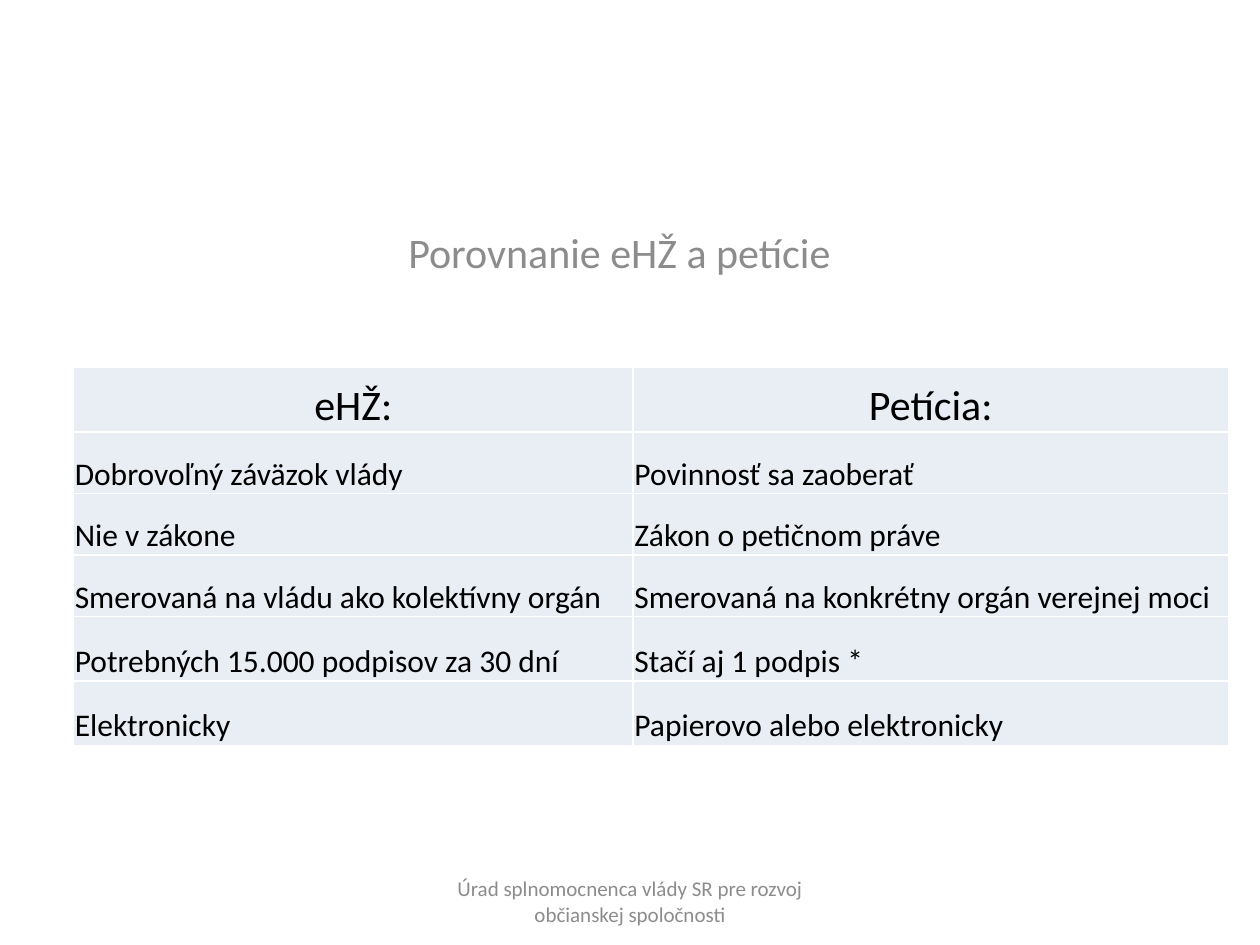
import dataclasses
import pptx
import pptx.dml.color
import pptx.enum.text
import pptx.oxml
import pptx.oxml.ns
import pptx.util

Pt = pptx.util.Pt
ALIGN = pptx.enum.text.PP_ALIGN
ANCHOR = pptx.enum.text.MSO_ANCHOR
GREY, BLACK, WHITE, PALE = "8C8C8C", "000000", "FFFFFF", "E9EDF4"


@dataclasses.dataclass
class Row:
    left: str
    right: str
    height: float
    size: float = 18
    align: ALIGN = ALIGN.LEFT


ROWS = [
    Row("eHŽ:", "Petícia:", 36.8, 24, ALIGN.CENTER),
    Row("Dobrovoľný záväzok vlády", "Povinnosť sa zaoberať", 35.2),
    Row("Nie v zákone", "Zákon o petičnom práve", 35.2),
    Row("Smerovaná na vládu ako kolektívny orgán",
        "Smerovaná na konkrétny orgán verejnej moci", 35.2),
    Row("Potrebných 15.000 podpisov za 30 dní", "Stačí aj 1 podpis *", 36.8),
    Row("Elektronicky", "Papierovo alebo elektronicky", 36.8),
]
COLS = [319.8, 340.2]


def color(code: str) -> pptx.dml.color.RGBColor:
    return pptx.dml.color.RGBColor.from_string(code)


def write(frame, text: str, size: float, code: str, align: ALIGN) -> None:
    frame.text = text
    frame.word_wrap = True
    para = frame.paragraphs[0]
    para.alignment = align
    font = para.runs[0].font
    font.name, font.size = "Calibri", Pt(size)
    font.color.rgb = color(code)


def border(cell, code: str, width: float) -> None:
    props = cell._tc.get_or_add_tcPr()
    space = pptx.oxml.ns.nsdecls("a")
    for spot, side in enumerate(("lnL", "lnR", "lnT", "lnB")):
        props.insert(spot, pptx.oxml.parse_xml(
            f'<a:{side} {space} w="{Pt(width)}"><a:solidFill>'
            f'<a:srgbClr val="{code}"/></a:solidFill></a:{side}>'))


def fill(cell, text: str, row: Row) -> None:
    write(cell.text_frame, text, row.size, BLACK, row.align)
    cell.vertical_anchor = ANCHOR.BOTTOM
    cell.margin_left = cell.margin_right = cell.margin_top = Pt(0.75)
    cell.margin_bottom = 0
    cell.fill.solid()
    cell.fill.fore_color.rgb = color(PALE)
    border(cell, WHITE, 1)


def grid(slide, left: float, top: float) -> None:
    high = sum(row.height for row in ROWS)
    table = slide.shapes.add_table(len(ROWS), len(COLS), Pt(left), Pt(top),
                                   Pt(sum(COLS)), Pt(high)).table
    for col, width in zip(table.columns, COLS):
        col.width = Pt(width)
    for line, row in zip(table.rows, ROWS):
        line.height = Pt(row.height)
        for cell, text in zip(line.cells, (row.left, row.right)):
            fill(cell, text, row)


def main() -> None:
    deck = pptx.Presentation()
    deck.slide_width, deck.slide_height = Pt(720), Pt(540)
    slide = deck.slides.add_slide(deck.slide_layouts[0])

    # Heading in the subtitle placeholder; the title is not used
    title = slide.shapes.title
    title.element.getparent().remove(title.element)
    head = slide.placeholders[1]
    head.left, head.top, head.width, head.height = map(Pt, (36, 126, 636, 42))
    write(head.text_frame, "Porovnanie eHŽ a petície", 24, GREY, ALIGN.CENTER)

    # Comparison table
    grid(slide, 42, 210)

    # Footer
    foot = slide.shapes.add_textbox(Pt(246), Pt(500.5), Pt(228), Pt(28.8))
    write(foot.text_frame,
          "Úrad splnomocnenca vlády SR pre rozvoj občianskej spoločnosti",
          12, GREY, ALIGN.CENTER)
    foot.text_frame.vertical_anchor = ANCHOR.MIDDLE

    deck.save("out.pptx")


if __name__ == "__main__":
    main()
